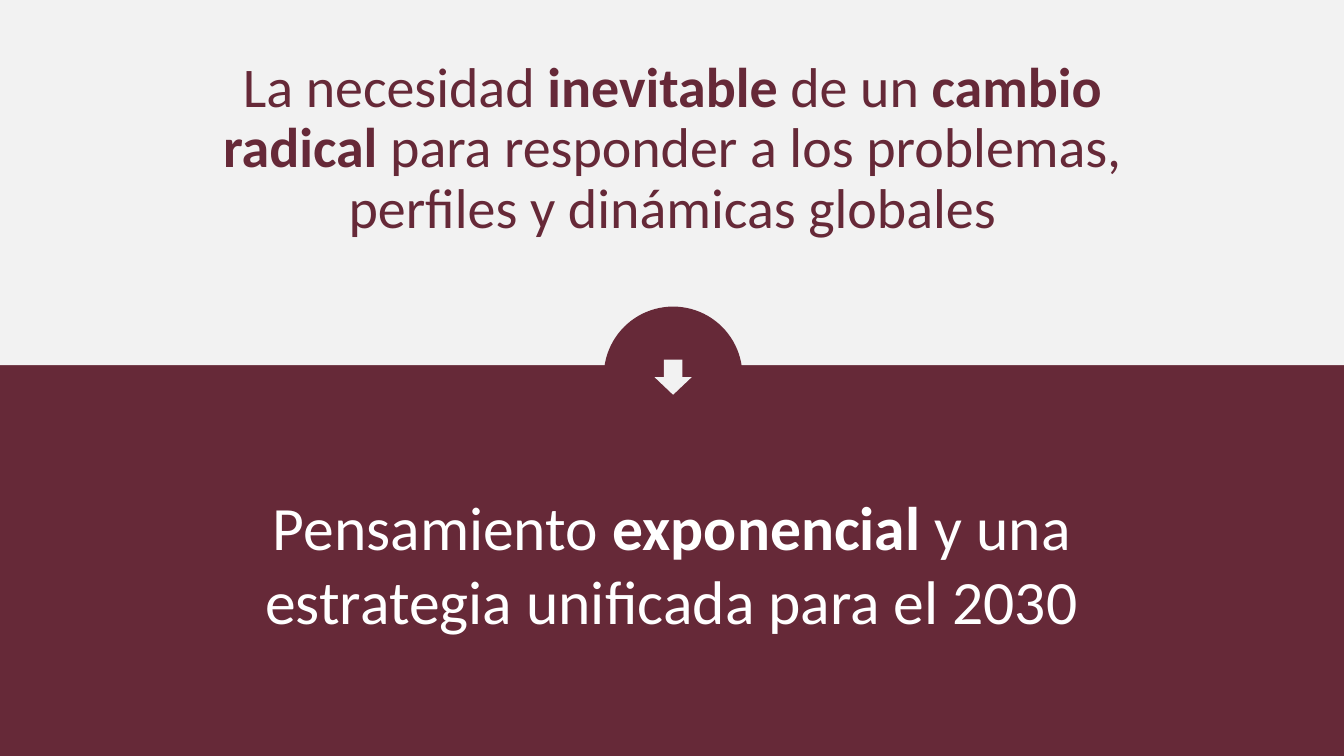
import pptx
import pptx.util
import pptx.dml.color
import pptx.enum.shapes
import pptx.enum.text

Pt = pptx.util.Pt
SHAPES = pptx.enum.shapes.MSO_SHAPE
ANCHOR = pptx.enum.text.MSO_ANCHOR
AUTO_SIZE = pptx.enum.text.MSO_AUTO_SIZE

NEED = [
    ("La necesidad ", False),
    ("inevitable", True),
    (" de un ", False),
    ("cambio radical ", True),
    ("para responder a los problemas, perfiles y dinámicas globales", False),
]
ANSWER = [
    ("Pensamiento ", False),
    ("exponencial", True),
    (" y una estrategia unificada para el 2030", False),
]

MAROON, LIGHT, WHITE = "662938", "F2F2F2", "FFFFFF"
WIDTH, HEIGHT = 960, 540
SPLIT = 260.8
CIRCLE = 99
CIRCLE_CENTER = (480.8, 268.5)
ARROW_WIDTH, ARROW_HEIGHT = 26.4, 25


def color(value):
    return pptx.dml.color.RGBColor.from_string(value)


def add_block(slide, kind, left, top, width, height, fill):
    shape = slide.shapes.add_shape(kind, Pt(left), Pt(top), Pt(width), Pt(height))
    shape.shadow.inherit = False
    shape.fill.solid()
    shape.fill.fore_color.rgb = color(fill)
    shape.line.fill.background()


def write_text(shape, runs, *, size, fill, anchor, auto_size, line_spacing=1.0):
    frame = shape.text_frame
    frame.word_wrap = True
    frame.auto_size = auto_size
    frame.vertical_anchor = anchor
    paragraph = frame.paragraphs[0]
    paragraph.alignment = pptx.enum.text.PP_ALIGN.CENTER
    paragraph.line_spacing = line_spacing
    paragraph.space_before = Pt(0)
    for text, bold in runs:
        run = paragraph.add_run()
        run.text = text
        run.font.name = "Calibri"
        run.font.size = Pt(size)
        run.font.bold = bold
        run.font.color.rgb = color(fill)


def main():
    presentation = pptx.Presentation()
    presentation.slide_width, presentation.slide_height = Pt(WIDTH), Pt(HEIGHT)
    slide = presentation.slides.add_slide(presentation.slide_layouts[5])
    center_x, center_y = CIRCLE_CENTER

    add_block(slide, SHAPES.RECTANGLE, 0, SPLIT, WIDTH, HEIGHT - SPLIT, MAROON)
    add_block(slide, SHAPES.RECTANGLE, 0, 0, WIDTH, SPLIT, LIGHT)
    add_block(slide, SHAPES.OVAL, center_x - CIRCLE / 2, center_y - CIRCLE / 2,
              CIRCLE, CIRCLE, MAROON)

    answer = slide.shapes.add_textbox(Pt(160), Pt(345.6), Pt(640), Pt(113.8))
    write_text(answer, ANSWER, size=44, fill=WHITE, anchor=ANCHOR.TOP,
               auto_size=AUTO_SIZE.SHAPE_TO_FIT_TEXT)

    title = slide.shapes.title
    title.left, title.top, title.width, title.height = Pt(135.2), Pt(91.4), Pt(690), Pt(104.4)
    frame = title.text_frame
    frame.margin_left = frame.margin_right = frame.margin_top = 0
    frame.margin_bottom = Pt(24)
    write_text(title, NEED, size=40, fill=MAROON, anchor=ANCHOR.BOTTOM,
               auto_size=AUTO_SIZE.NONE, line_spacing=0.9)
    title.element.getparent().append(title.element)

    add_block(slide, SHAPES.DOWN_ARROW, center_x - ARROW_WIDTH / 2,
              center_y + 1 - ARROW_HEIGHT / 2, ARROW_WIDTH, ARROW_HEIGHT, LIGHT)
    presentation.save("out.pptx")


if __name__ == "__main__":
    main()
